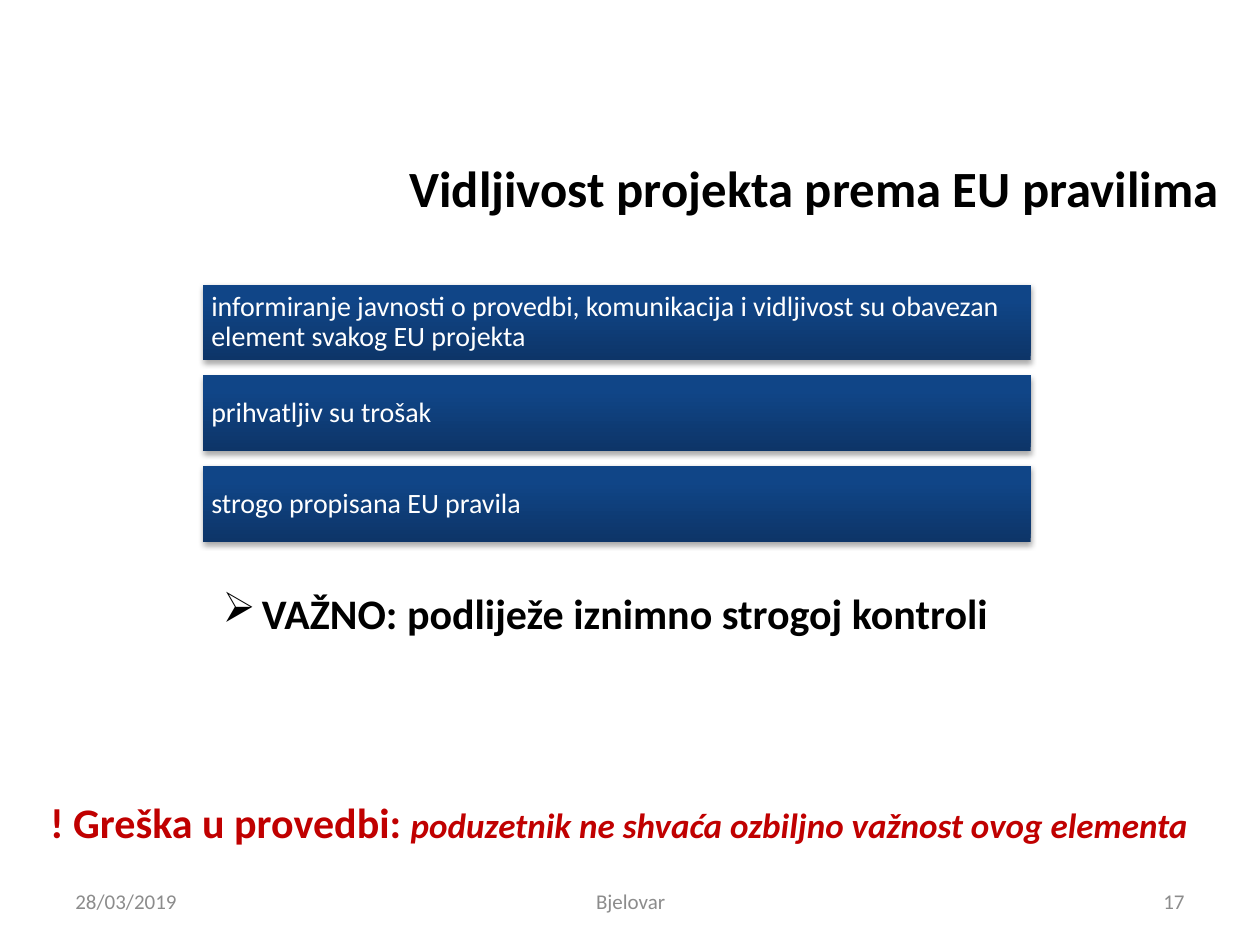
import dataclasses

import lxml.etree
import pptx
import pptx.dml.color
import pptx.enum.shapes
import pptx.enum.text
import pptx.oxml
import pptx.oxml.ns
import pptx.util

Cm = pptx.util.Cm
Pt = pptx.util.Pt
ALIGN = pptx.enum.text.PP_ALIGN
ANCHOR = pptx.enum.text.MSO_ANCHOR
qn = pptx.oxml.ns.qn


@dataclasses.dataclass(frozen=True)
class Theme:
    font: str = "Calibri"
    ink: str = "000000"
    light: str = "FFFFFF"
    muted: str = "8C8C8C"
    warning: str = "C00000"
    bar_stops: tuple = ((0, "0D3568"), (80, "104587"), (100, "0E458A"))
    title_size: int = 29
    accent_size: int = 24
    detail_size: int = 20
    bar_size: int = 16
    footer_size: int = 12


THEME = Theme()

BARS = (
    "informiranje javnosti o provedbi, komunikacija i vidljivost su obavezan element svakog EU projekta",
    "prihvatljiv su trošak",
    "strogo propisana EU pravila",
)

FOOTERS = (
    ("28/03/2019", 1.27, 5.92, ALIGN.LEFT),
    ("Bjelovar", 8.69, 8.05, ALIGN.CENTER),
    ("17", 18.21, 5.92, ALIGN.RIGHT),
)


def add_span(para, text, size, color, bold=False, italic=False):
    span = para.add_run()
    span.text = text
    span.font.name = THEME.font
    span.font.size = Pt(size)
    span.font.bold = bold
    span.font.italic = italic
    span.font.color.rgb = pptx.dml.color.RGBColor.from_string(color)


def add_box(page, left, top, width, height, anchor=ANCHOR.TOP):
    box = page.shapes.add_textbox(Cm(left), Cm(top), Cm(width), Cm(height))
    box.text_frame.word_wrap = True
    box.text_frame.vertical_anchor = anchor
    return box.text_frame.paragraphs[0]


def set_indent(para, margin, first_line=0):
    properties = para._p.get_or_add_pPr()
    properties.set("marL", str(Cm(margin)))
    properties.set("indent", str(Cm(first_line)))
    return properties


def set_title(page, text):
    title = page.shapes.title
    title.left, title.top, title.width, title.height = Cm(1.98), Cm(2.74), Cm(22.86), Cm(3.18)
    frame = title.text_frame
    frame.auto_size = pptx.enum.text.MSO_AUTO_SIZE.NONE
    frame.vertical_anchor = ANCHOR.MIDDLE
    frame.margin_bottom = Cm(1.25)
    para = frame.paragraphs[0]
    para.alignment = ALIGN.RIGHT
    add_span(para, text, THEME.title_size, THEME.ink, bold=True)


def shade_bar(bar):
    bar.fill.gradient()
    bar.fill.gradient_angle = 90
    stops = bar._element.spPr.find(".//" + qn("a:gsLst"))
    for stop in list(stops):
        stops.remove(stop)
    for position, color in THEME.bar_stops:
        stop = lxml.etree.SubElement(stops, qn("a:gs"), pos=str(position * 1000))
        lxml.etree.SubElement(stop, qn("a:srgbClr"), val=color)
    bar.line.fill.background()
    bar.shadow.inherit = False
    effects = bar._element.spPr.find(qn("a:effectLst"))
    shadow = lxml.etree.SubElement(
        effects, qn("a:outerShdw"), blurRad=str(Pt(3.1)), dist=str(Pt(1.8)),
        dir="5400000", rotWithShape="0")
    color = lxml.etree.SubElement(shadow, qn("a:srgbClr"), val=THEME.ink)
    lxml.etree.SubElement(color, qn("a:alpha"), val="35000")


def add_bar(page, text, top):
    bar = page.shapes.add_shape(
        pptx.enum.shapes.MSO_SHAPE.RECTANGLE, Cm(4.09), Cm(top), Cm(16.69), Cm(1.52))
    shade_bar(bar)
    frame = bar.text_frame
    frame.word_wrap = True
    frame.vertical_anchor = ANCHOR.MIDDLE
    frame.margin_left = frame.margin_right = Cm(0.17)
    frame.margin_top = frame.margin_bottom = Cm(0.17)
    para = frame.paragraphs[0]
    para.alignment = ALIGN.LEFT
    para.line_spacing = 0.9
    add_span(para, text, THEME.bar_size, THEME.light)


def add_footer(page, text, left, width, alignment):
    para = add_box(page, left, 17.65, width, 1.02, ANCHOR.MIDDLE)
    para.alignment = alignment
    add_span(para, text, THEME.footer_size, THEME.muted)


def add_mistake(page):
    para = add_box(page, 0.38, 15.93, 25.02, 1.27)
    set_indent(para, 0.38)
    add_span(para, "! Greška u provedbi: ", THEME.accent_size, THEME.warning, bold=True)
    add_span(para, "poduzetnik ne shvaća ozbiljno važnost ovog elementa",
             THEME.detail_size, THEME.warning, bold=True, italic=True)


def add_key_point(page):
    para = add_box(page, 4.24, 11.71, 16.41, 2.06)
    properties = set_indent(para, 0.79, -0.79)
    lxml.etree.SubElement(properties, qn("a:buChar"), char="➢")
    add_span(para, "VAŽNO: podliježe iznimno strogoj kontroli",
             THEME.accent_size, THEME.ink, bold=True)


def main():
    deck = pptx.Presentation()
    deck.slide_width, deck.slide_height = Cm(25.4), Cm(19.05)
    page = deck.slides.add_slide(deck.slide_layouts[5])
    set_title(page, "Vidljivost projekta prema EU pravilima")
    for index, text in enumerate(BARS):
        add_bar(page, text, 5.74 + index * 1.83)
    add_mistake(page)
    add_key_point(page)
    for footer in FOOTERS:
        add_footer(page, *footer)
    deck.save("out.pptx")


if __name__ == "__main__":
    main()
